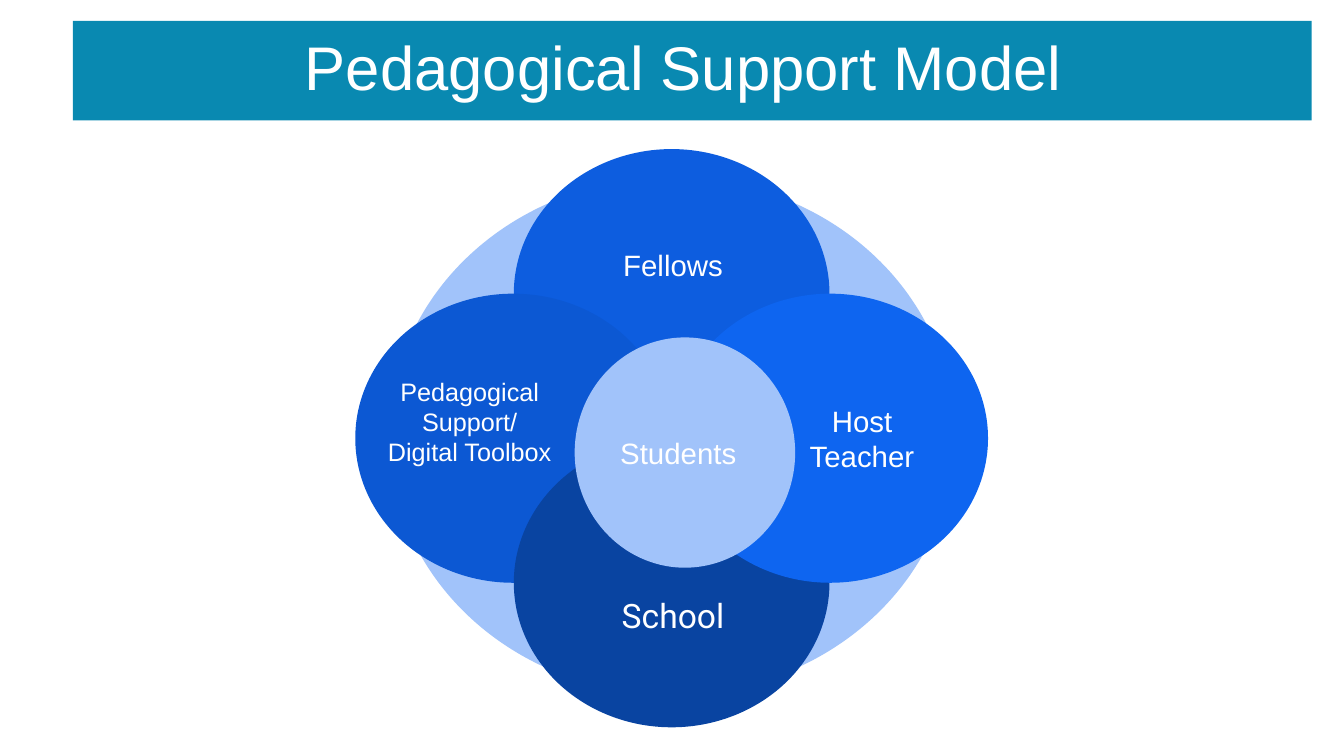
import pptx
import pptx.util
import pptx.dml.color
import pptx.enum.shapes
import pptx.enum.text

Pt = pptx.util.Pt
RGBColor = pptx.dml.color.RGBColor
PP_ALIGN = pptx.enum.text.PP_ALIGN
MIDDLE = pptx.enum.text.MSO_ANCHOR.MIDDLE

WHITE = RGBColor(0xFF, 0xFF, 0xFF)
TEAL = RGBColor(0x09, 0x89, 0xB1)
PALE = RGBColor(0xA1, 0xC3, 0xFA)
BLUE_TOP = RGBColor(0x0D, 0x5D, 0xDF)
BLUE_LEFT = RGBColor(0x0C, 0x58, 0xD3)
BLUE_BOTTOM = RGBColor(0x09, 0x44, 0xA1)
BLUE_RIGHT = RGBColor(0x0E, 0x65, 0xF0)

TITLE = "Pedagogical Support Model "
TITLE_BOX = (52, 15, 885, 71)

# Direction from the centre, fill, label lines, font, size, label box
PETALS = [
    ((0, -1), BLUE_TOP, ["Fellows"], "Arial", 21, (403, 155.5, 155.5, 67)),
    ((-1, 0), BLUE_LEFT, ["Pedagogical Support/", "Digital Toolbox"],
     "Arial", 18, (253.5, 263.5, 164, 75)),
    ((0, 1), BLUE_BOTTOM, ["School"], "Roboto", 24, (403, 405.5, 155.5, 67)),
    ((1, 0), BLUE_RIGHT, ["Host", "Teacher"], "Arial", 21, (538, 279.5, 155.5, 67)),
]
CENTRE_X, CENTRE_Y = 479.75, 313
PETAL_W, PETAL_H = 225.5, 206.5
STEP_X, STEP_Y = PETAL_W / 2 + 0.5, PETAL_H / 2
RING_W, RING_H = 404, 369.5
STUDENTS_BOX = (410.5, 241, 157.5, 164.5)


def write(sp, lines, font, size, align, inset=9.5):
    tf = sp.text_frame
    tf.word_wrap = True
    tf.vertical_anchor = MIDDLE
    tf.margin_left = tf.margin_right = tf.margin_top = tf.margin_bottom = Pt(inset)
    for i, line in enumerate(lines):
        p = tf.paragraphs[0] if i == 0 else tf.add_paragraph()
        p.alignment = align
        r = p.add_run()
        r.text = line
        r.font.name = font
        r.font.size = Pt(size)
        r.font.color.rgb = WHITE


def add_ellipse(s, box, fill):
    sp = s.shapes.add_shape(pptx.enum.shapes.MSO_SHAPE.OVAL, *map(Pt, box))
    sp.shadow.inherit = False
    sp.fill.solid()
    sp.fill.fore_color.rgb = fill
    sp.line.fill.background()
    return sp


def centred(x, y, w, h):
    """Return the box of size w by h whose centre is x, y."""
    return x - w / 2, y - h / 2, w, h


prs = pptx.Presentation()
prs.slide_width, prs.slide_height = Pt(960), Pt(540)
s = prs.slides.add_slide(prs.slide_layouts[5])

title = s.shapes.title
title.left, title.top, title.width, title.height = map(Pt, TITLE_BOX)
title.fill.solid()
title.fill.fore_color.rgb = TEAL
write(title, [TITLE], "Arial", 44, PP_ALIGN.CENTER, 3.6)
title.text_frame.paragraphs[0].line_spacing = 0.9
title.text_frame.auto_size = pptx.enum.text.MSO_AUTO_SIZE.NONE

add_ellipse(s, centred(CENTRE_X, CENTRE_Y - 1.5, RING_W, RING_H), PALE)
for (dx, dy), fill, lines, font, size, label_box in PETALS:
    x, y = CENTRE_X + dx * STEP_X, CENTRE_Y + dy * STEP_Y
    add_ellipse(s, centred(x, y, PETAL_W, PETAL_H), fill)
    label = s.shapes.add_textbox(*map(Pt, label_box))
    write(label, lines, font, size, PP_ALIGN.CENTER)

students = add_ellipse(s, STUDENTS_BOX, PALE)
write(students, ["Students"], "Arial", 21, PP_ALIGN.LEFT)

prs.save("out.pptx")
